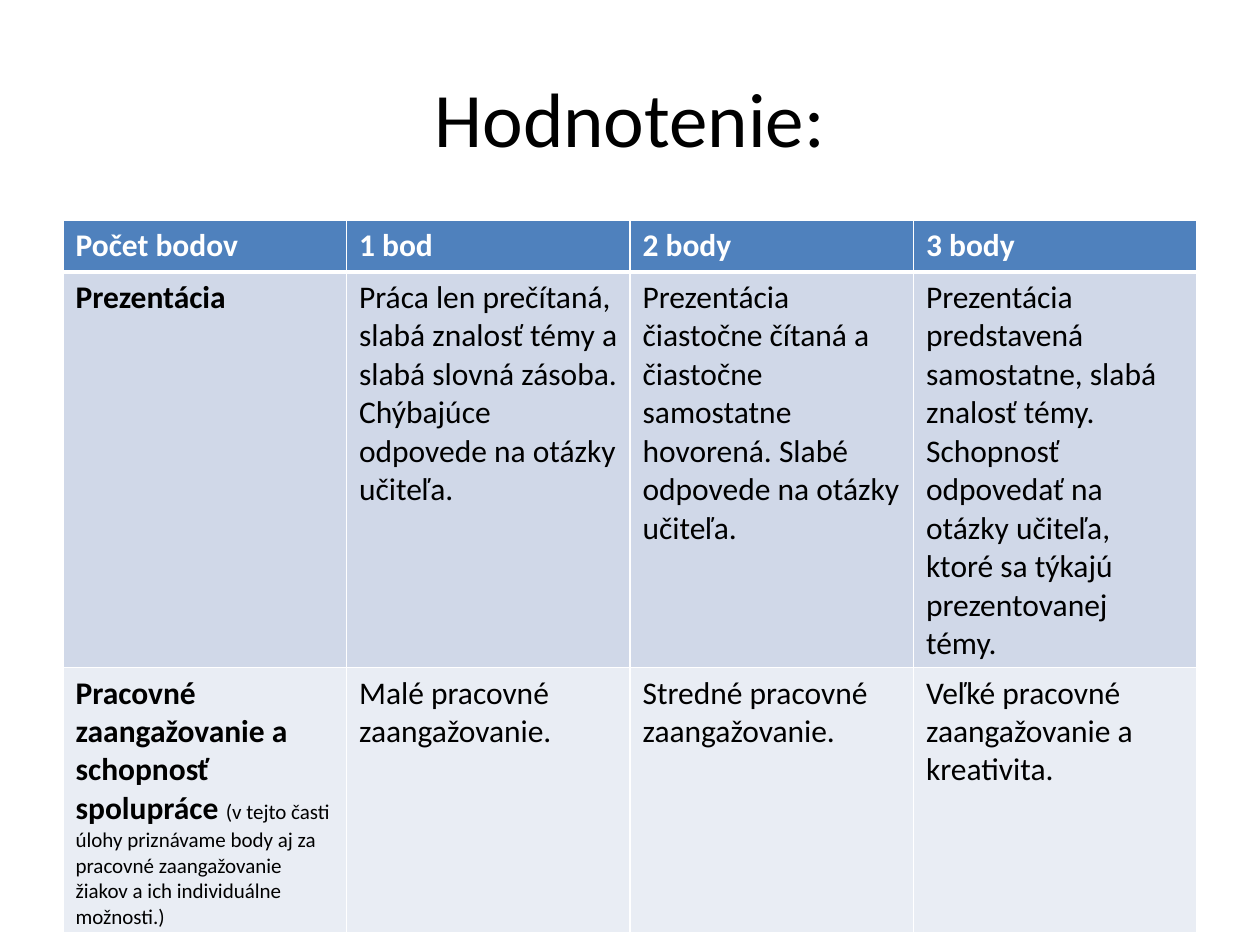
from lxml.etree import SubElement
from pptx import Presentation
from pptx.dml.color import RGBColor
from pptx.enum.text import MSO_ANCHOR, PP_ALIGN
from pptx.oxml.ns import qn
from pptx.util import Inches, Pt

TITLE = "Hodnotenie:"
ROWS = [
    ["Počet bodov", "1 bod", "2 body", "3 body"],
    [
        "Prezentácia",
        "Práca len prečítaná, slabá znalosť témy a slabá slovná zásoba. "
        "Chýbajúce odpovede na otázky učiteľa.",
        "Prezentácia čiastočne čítaná a čiastočne samostatne hovorená. "
        "Slabé odpovede na otázky učiteľa.",
        "Prezentácia predstavená samostatne, slabá znalosť témy. Schopnosť "
        "odpovedať na otázky učiteľa, ktoré sa týkajú prezentovanej témy.",
    ],
    [
        "Pracovné zaangažovanie a schopnosť spolupráce ",
        "Malé pracovné zaangažovanie.",
        "Stredné pracovné zaangažovanie.",
        "Veľké pracovné zaangažovanie a kreativita.",
    ],
]
NOTE = ("(v tejto časti úlohy priznávame body aj za pracovné zaangažovanie "
        "žiakov a ich individuálne možnosti.)")
FILLS = ["4F81BD", "D0D8E8", "E9EDF4"]
HEIGHTS = [0.41, 3.14, 2.06]
LEFT, WIDTH = 0.5, 9


def rgb(color):
    return RGBColor.from_string(color)


def add_text(p, text, size=18, color="000000", bold=False, align=PP_ALIGN.LEFT):
    p.alignment = align
    r = p.add_run()
    r.text = text
    r.font.name = "Calibri"
    r.font.size = Pt(size)
    r.font.bold = bold
    r.font.color.rgb = rgb(color)


def set_borders(cell, top=1, bottom=1):
    tcPr = cell._tc.get_or_add_tcPr()
    sides = {"lnL": 1, "lnR": 1, "lnT": top, "lnB": bottom}
    for side, width in sides.items():
        ln = SubElement(tcPr, qn(f"a:{side}"), w=str(Pt(width)))
        SubElement(SubElement(ln, qn("a:solidFill")), qn("a:srgbClr"), val="FFFFFF")


prs = Presentation()
prs.slide_width, prs.slide_height = Inches(10), Inches(7.5)
s = prs.slides.add_slide(prs.slide_layouts[6])

tf = s.shapes.add_textbox(Inches(LEFT), Inches(0.3), Inches(WIDTH), Inches(1.25)).text_frame
tf.word_wrap = True
tf.vertical_anchor = MSO_ANCHOR.MIDDLE
add_text(tf.paragraphs[0], TITLE, size=44, align=PP_ALIGN.CENTER)

table = s.shapes.add_table(
    len(ROWS), len(ROWS[0]),
    Inches(LEFT), Inches(1.75), Inches(WIDTH), Inches(sum(HEIGHTS)),
).table
for col in table.columns:
    col.width = Inches(WIDTH / len(ROWS[0]))

for i, (row, fill, height) in enumerate(zip(ROWS, FILLS, HEIGHTS)):
    table.rows[i].height = Inches(height)
    for j, text in enumerate(row):
        cell = table.cell(i, j)
        set_borders(cell, top=3 if i == 1 else 1, bottom=3 if i == 0 else 1)
        cell.fill.solid()
        cell.fill.fore_color.rgb = rgb(fill)
        add_text(cell.text_frame.paragraphs[0], text,
                 color="FFFFFF" if i == 0 else "000000", bold=i == 0 or j == 0)

add_text(table.cell(2, 0).text_frame.paragraphs[0], NOTE, size=12)

prs.save("out.pptx")
